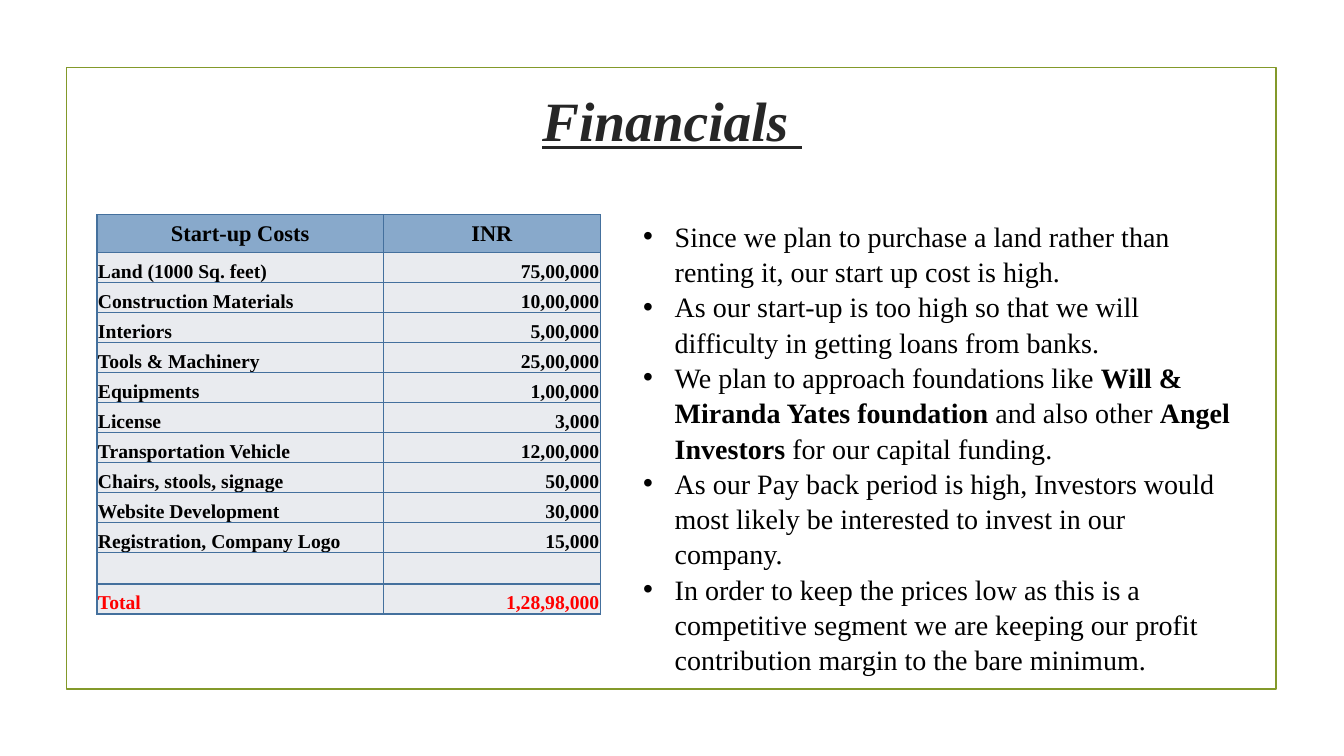
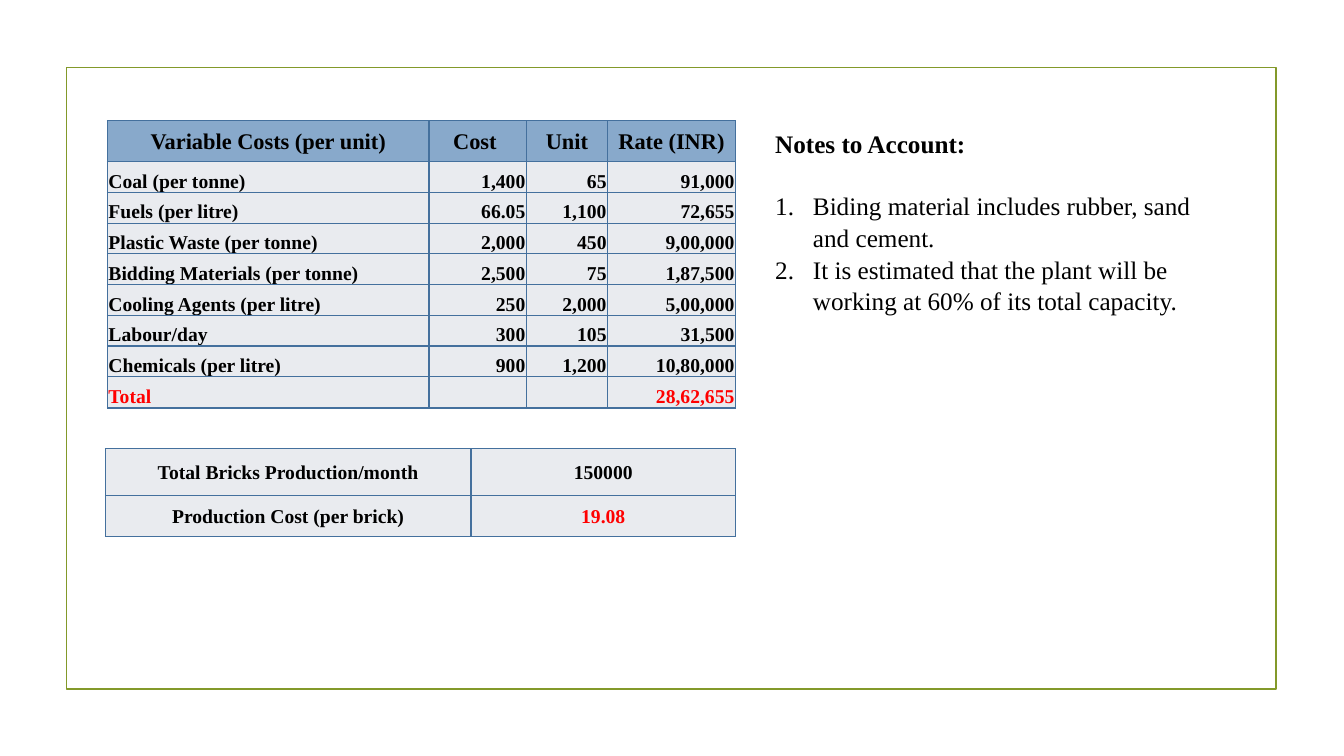
import pptx
import pptx.util
import pptx.dml.color
import pptx.enum.shapes
import pptx.enum.text
import pptx.oxml
import pptx.oxml.ns

Pt = pptx.util.Pt
RGBColor = pptx.dml.color.RGBColor
ALIGN = pptx.enum.text.PP_ALIGN
ANCHOR = pptx.enum.text.MSO_ANCHOR
AUTO_SIZE = pptx.enum.text.MSO_AUTO_SIZE

OLIVE = RGBColor(0x83, 0x99, 0x2A)
HEADER_BLUE = RGBColor(0x88, 0xA9, 0xCB)
CELL_GREY = RGBColor(0xE9, 0xEB, 0xEF)
BORDER_BLUE = RGBColor(0x44, 0x70, 0x9D)
BLACK = RGBColor(0, 0, 0)
CHARCOAL = RGBColor(0x26, 0x26, 0x26)
RED = RGBColor(0xFF, 0, 0)

FONT = "Times New Roman"
FRAME_BOX = (47.5, 48.2, 864, 444.2)
TITLE_FONT = {"name": FONT, "size": Pt(39.6), "bold": True, "italic": True, "underline": True}
HEADER_FONT = {"name": FONT, "size": Pt(16), "bold": True}
CELL_FONT = {"name": FONT, "size": Pt(14), "bold": True}
CELL_MARGINS = {"margin_left": Pt(0.7), "margin_right": Pt(0.7), "margin_top": Pt(0.7), "margin_bottom": 0}
BULLET = '<a:buChar {} char="•"/>'
NUMBER = '<a:buAutoNum {} type="arabicPeriod"/>'
NO_BULLET = "<a:buNone {}/>"

STARTUP_COSTS = [
    ("Start-up Costs", "INR"),
    ("Land (1000 Sq. feet)", "75,00,000"),
    ("Construction Materials", "10,00,000"),
    ("Interiors", "5,00,000"),
    ("Tools & Machinery", "25,00,000"),
    ("Equipments", "1,00,000"),
    ("License", "3,000"),
    ("Transportation Vehicle", "12,00,000"),
    ("Chairs, stools, signage", "50,000"),
    ("Website Development", "30,000"),
    ("Registration, Company Logo", "15,000"),
    ("", ""),
    ("Total", "1,28,98,000"),
]
VARIABLE_COSTS = [
    ("Variable Costs (per unit)", "Cost ", "Unit", "Rate (INR)"),
    ("Coal (per tonne)", "1,400", "65", "91,000"),
    ("Fuels (per litre)", "66.05", "1,100", "72,655"),
    ("Plastic Waste (per tonne)", "2,000", "450", "9,00,000"),
    ("Bidding Materials (per tonne)", "2,500", "75", "1,87,500"),
    ("Cooling Agents (per litre)", "250", "2,000", "5,00,000"),
    ("Labour/day", "300", "105", "31,500"),
    ("Chemicals (per litre)", "900", "1,200", "10,80,000"),
    ("Total", "", "", "28,62,655"),
]
PRODUCTION = [
    ("Total Bricks Production/month", "150000"),
    ("Production Cost (per brick)", "19.08"),
]
FUNDING_POINTS = [
    [("Since we plan to purchase a land rather than renting it, our start up cost is high.", False)],
    [("As our start-up is too high so that we will difficulty in getting loans from banks.", False)],
    [("We plan to approach foundations like ", False),
     ("Will & Miranda Yates foundation", True),
     (" and also other ", False),
     ("Angel Investors ", True),
     ("for our capital funding.", False)],
    [("As our Pay back period is high, Investors would most likely be interested "
      "to invest in our company.", False)],
    [("In order to keep the prices low as this is a competitive segment we are keeping "
      "our profit contribution margin to the bare minimum.", False)],
]
ACCOUNT_NOTES = [
    [("Biding material includes rubber, sand and cement.", False)],
    [("It is estimated that the plant will be working at 60% of its total capacity.", False)],
]


def apply(target, values):
    for name, value in values.items():
        setattr(target, name, value)


def place(shape, box):
    apply(shape, dict(zip(("left", "top", "width", "height"), map(Pt, box))))


def add_run(p, text, font, color):
    r = p.add_run()
    r.text = text
    apply(r.font, font)
    r.font.color.rgb = color


def add_master_frame(prs, s, box):
    frame = s.shapes.add_shape(pptx.enum.shapes.MSO_SHAPE.RECTANGLE, *map(Pt, box))
    frame.shadow.inherit = False
    frame.fill.background()
    frame.line.color.rgb = OLIVE
    frame.line.width = Pt(1.25)
    frame.element.nvSpPr.cNvPr.set("id", "20")
    prs.slide_master.shapes.element.insert(2, frame.element)


def add_title(s, box, text):
    title = s.shapes.title
    place(title, box)
    tf = title.text_frame
    apply(tf, {"auto_size": AUTO_SIZE.NONE, "vertical_anchor": ANCHOR.MIDDLE})
    p = tf.paragraphs[0]
    p.alignment = ALIGN.CENTER
    add_run(p, text, TITLE_FONT, CHARCOAL)


def add_list(s, box, items, size, marker, indent, heading=None):
    body = s.placeholders[1]
    place(body, box)
    tf = body.text_frame
    apply(tf, {"auto_size": AUTO_SIZE.SHAPE_TO_FIT_TEXT, "vertical_anchor": ANCHOR.TOP})
    lines = [(item, marker, indent, 0) for item in items]
    if heading:
        lines.insert(0, ([(heading, True)], NO_BULLET, 0, size * 1.2))
    for i, (runs, bullet, hang, gap) in enumerate(lines):
        p = tf.add_paragraph() if i else tf.paragraphs[0]
        apply(p, {"space_before": Pt(0), "space_after": Pt(gap), "line_spacing": 1.05})
        pPr = p._p.get_or_add_pPr()
        pPr.set("marL", str(Pt(hang)))
        pPr.set("indent", str(-Pt(hang)))
        pPr.append(pptx.oxml.parse_xml(bullet.format(pptx.oxml.ns.nsdecls("a"))))
        for text, bold in runs:
            add_run(p, text, {"name": FONT, "size": Pt(size), "bold": bold}, BLACK)


def set_borders(cell):
    tcPr = cell._tc.get_or_add_tcPr()
    for i, side in enumerate("LRTB"):
        tcPr.insert(i, pptx.oxml.parse_xml(
            f'<a:ln{side} {pptx.oxml.ns.nsdecls("a")} w="{Pt(1)}"><a:solidFill>'
            f'<a:srgbClr val="{BORDER_BLUE}"/></a:solidFill></a:ln{side}>'))


def add_cost_table(s, origin, widths, heights, rows, red, header=True):
    box = (*origin, sum(widths), sum(heights))
    table = s.shapes.add_table(len(rows), len(widths), *map(Pt, box)).table
    apply(table, {"first_row": header, "horz_banding": False})
    for column, width in zip(table.columns, widths):
        column.width = Pt(width)
    for i, (row, height) in enumerate(zip(rows, heights)):
        table.rows[i].height = Pt(height)
        is_header = header and i == 0
        centred = is_header or not header
        for j, text in enumerate(row):
            cell = table.cell(i, j)
            cell.fill.solid()
            cell.fill.fore_color.rgb = HEADER_BLUE if is_header else CELL_GREY
            set_borders(cell)
            apply(cell, CELL_MARGINS)
            cell.vertical_anchor = ANCHOR.MIDDLE if centred else ANCHOR.BOTTOM
            p = cell.text_frame.paragraphs[0]
            p.alignment = ALIGN.CENTER if centred else ALIGN.RIGHT if j else ALIGN.LEFT
            add_run(p, text, HEADER_FONT if is_header else CELL_FONT, RED if text in red else BLACK)


def build_financials(s):
    add_title(s, (102.2, 61.2, 756, 48.2), "Financials ")
    add_cost_table(s, (69.3, 153.3), (204.5, 155), [27.2] + [21.43] * 12,
                   STARTUP_COSTS, ("Total", "1,28,98,000"))
    add_list(s, (452.2, 151.9, 439.2, 298), FUNDING_POINTS, 20, BULLET, 22.5)


def build_variable_costs(s):
    title = s.shapes.title.element
    title.getparent().remove(title)
    add_cost_table(s, (76.8, 86.2), (229.7, 69.5, 58, 91.4), [29.3] + [21.95] * 8,
                   VARIABLE_COSTS, ("Total", "28,62,655"))
    add_cost_table(s, (75.4, 320.6), (261, 189), (33.4, 29.2), PRODUCTION, ("19.08",), header=False)
    add_list(s, (546.5, 87.1, 320.4, 138.2), ACCOUNT_NOTES, 18, NUMBER, 27, "Notes to Account:")


def main():
    prs = pptx.Presentation()
    prs.slide_width, prs.slide_height = Pt(960), Pt(540)
    layout = prs.slide_layouts[1]
    slides = [prs.slides.add_slide(layout) for _ in range(2)]
    add_master_frame(prs, slides[0], FRAME_BOX)
    for s, build in zip(slides, (build_financials, build_variable_costs)):
        build(s)
    prs.save("out.pptx")


if __name__ == "__main__":
    main()
